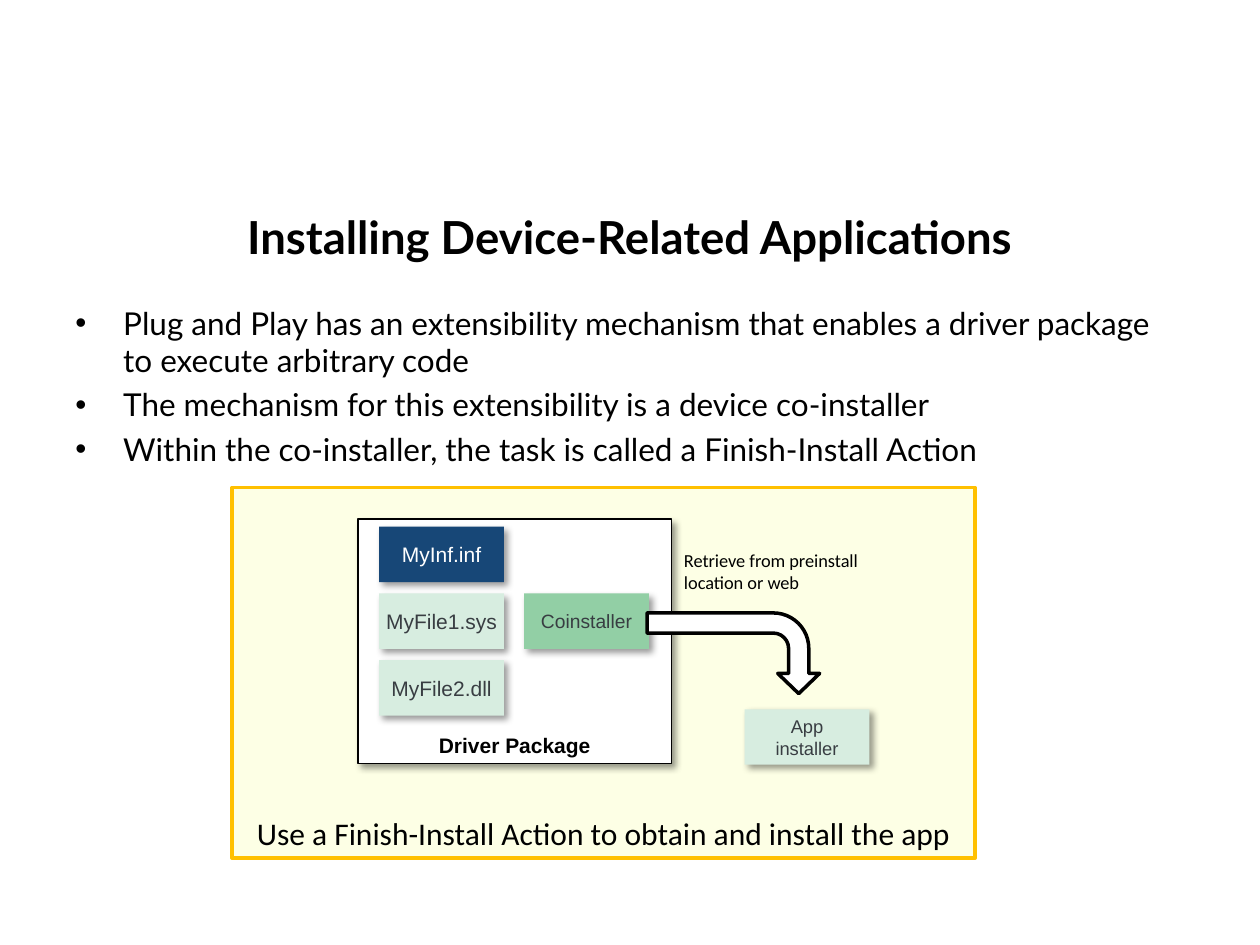
from dataclasses import dataclass

from lxml.etree import SubElement
from pptx import Presentation
from pptx.dml.color import RGBColor
from pptx.enum.shapes import MSO_SHAPE as Preset
from pptx.enum.text import MSO_ANCHOR as Anchor, PP_ALIGN as Align
from pptx.oxml.ns import qn
from pptx.util import Inches, Pt


@dataclass(frozen=True)
class Theme:
    """Colours, fonts and type sizes of the slide."""
    black: str = "000000"
    white: str = "FFFFFF"
    cream: str = "FDFFE5"
    gold: str = "FFC000"
    navy: str = "174777"
    mint: str = "D7EDE0"
    green: str = "92CFA5"
    slate: str = "383D42"
    heading_font: str = "Lato"
    note_font: str = "Calibri"
    label_font: str = "Arial"
    title_size: float = 26
    body_size: float = 18
    label_size: float = 12
    action_size: float = 11
    note_size: float = 10.5


THEME = Theme()

TITLE = "Installing Device-Related Applications"
BULLETS = [
    "Plug and Play has an extensibility mechanism that enables a driver package to execute arbitrary code",
    "The mechanism for this extensibility is a device co-installer",
    "Within the co-installer, the task is called a Finish-Install Action",
]
CAPTION = "Use a Finish-Install Action to obtain and install the app"
PACKAGE = "Driver Package"
PACKAGE_FILES = [
    ("MyInf.inf", 0, 0, THEME.navy, THEME.white, THEME.label_size),
    ("MyFile1.sys", 0, 1, THEME.mint, THEME.slate, THEME.label_size),
    ("MyFile2.dll", 0, 2, THEME.mint, THEME.slate, THEME.label_size),
    ("Coinstaller", 1, 1, THEME.green, THEME.slate, THEME.action_size),
]
INSTALLER = "App installer"
NOTE = "Retrieve from preinstall location or web"

GRID_LEFT, GRID_TOP = 3.01, 4.18
COLUMN_STEP, ROW_STEP = 1.15, 0.53
TILE_WIDTH, TILE_HEIGHT = 0.99, 0.44
BULLET_INDENT = 0.38


def write(shape, lines, font, size, color=THEME.black, bold=False,
          align=Align.LEFT, anchor=Anchor.TOP, wrap=True, bullet=False):
    """Fill a shape with evenly styled paragraphs."""
    frame = shape.text_frame
    frame.word_wrap = wrap
    frame.vertical_anchor = anchor
    frame.text = "\n".join(lines)
    for index, para in enumerate(frame.paragraphs):
        para.alignment = align
        if index:
            para.space_before = Pt(size * 0.2)
        if bullet:
            properties = para._p.get_or_add_pPr()
            properties.set("marL", str(Inches(BULLET_INDENT)))
            properties.set("indent", str(-Inches(BULLET_INDENT)))
            SubElement(properties, qn("a:buFont"), typeface=THEME.label_font)
            SubElement(properties, qn("a:buChar"), char="•")
        for span in para.runs:
            span.font.name = font
            span.font.size = Pt(size)
            span.font.bold = bold
            span.font.color.rgb = RGBColor.from_string(color)


def add_text(page, area, lines, font, size, **style):
    """Add a text box at the given area in inches."""
    box = page.shapes.add_textbox(*map(Inches, area))
    write(box, lines, font, size, **style)


def add_block(page, area, fill, line=None, width=0, preset=Preset.RECTANGLE, shadow=False):
    """Add a filled preset shape with an optional outline and shadow."""
    shape = page.shapes.add_shape(preset, *map(Inches, area))
    shape.shadow.inherit = False
    shape.fill.solid()
    shape.fill.fore_color.rgb = RGBColor.from_string(fill)
    if line:
        shape.line.color.rgb = RGBColor.from_string(line)
        shape.line.width = Pt(width)
    else:
        shape.line.fill.background()
    if shadow:
        effects = shape._element.spPr.find(qn("a:effectLst"))
        outer = SubElement(effects, qn("a:outerShdw"), blurRad=str(Pt(4)), dist=str(Pt(3)),
                           dir=str(45 * 60000), algn="tl", rotWithShape="0")
        color = SubElement(outer, qn("a:srgbClr"), val=THEME.black)
        SubElement(color, qn("a:alpha"), val="40000")
    return shape


def add_tile(page, left, top, text, fill, color, size, wrap=False):
    """Add a shadowed tile with a centred label."""
    tile = add_block(page, (left, top, TILE_WIDTH, TILE_HEIGHT), fill, shadow=True)
    write(tile, [text], THEME.label_font, size, color=color,
          align=Align.CENTER, anchor=Anchor.MIDDLE, wrap=wrap)


def main():
    """Build the slide and save it."""
    deck = Presentation()
    deck.slide_width, deck.slide_height = Inches(10), Inches(7.5)
    page = deck.slides.add_slide(deck.slide_layouts[6])

    panel = add_block(page, (1.84, 3.87, 5.9, 2.94), THEME.cream, THEME.gold, 2)
    write(panel, [CAPTION], THEME.note_font, THEME.body_size,
          align=Align.CENTER, anchor=Anchor.BOTTOM)
    add_text(page, (0.5, 1.25, 9, 1.25), [TITLE], THEME.heading_font, THEME.title_size,
             bold=True, align=Align.CENTER, anchor=Anchor.MIDDLE)
    add_text(page, (0.5, 2.36, 9, 1.25), BULLETS, THEME.heading_font, THEME.body_size, bullet=True)

    package_box = add_block(page, (2.84, 4.12, 2.49, 1.94), THEME.white, THEME.black, 0.75, shadow=True)
    write(package_box, [PACKAGE], THEME.label_font, THEME.label_size, bold=True,
          align=Align.CENTER, anchor=Anchor.BOTTOM, wrap=False)
    for text, column, row, fill, color, size in PACKAGE_FILES:
        add_tile(page, GRID_LEFT + column * COLUMN_STEP, GRID_TOP + row * ROW_STEP,
                 text, fill, color, size)
    add_tile(page, 5.91, 5.63, INSTALLER, THEME.mint, THEME.slate, THEME.note_size, wrap=True)

    arrow = add_block(page, (5.5, 4.5, 0.64, 1.37), THEME.white, THEME.black, 2, Preset.BENT_ARROW)
    arrow.rotation = 90
    for index, value in enumerate((0.25, 0.26, 0.25, 0.44)):
        arrow.adjustments[index] = value
    add_text(page, (5.33, 4.31, 1.71, 0.45), [NOTE], THEME.note_font, THEME.note_size)

    deck.save("out.pptx")


if __name__ == "__main__":
    main()
